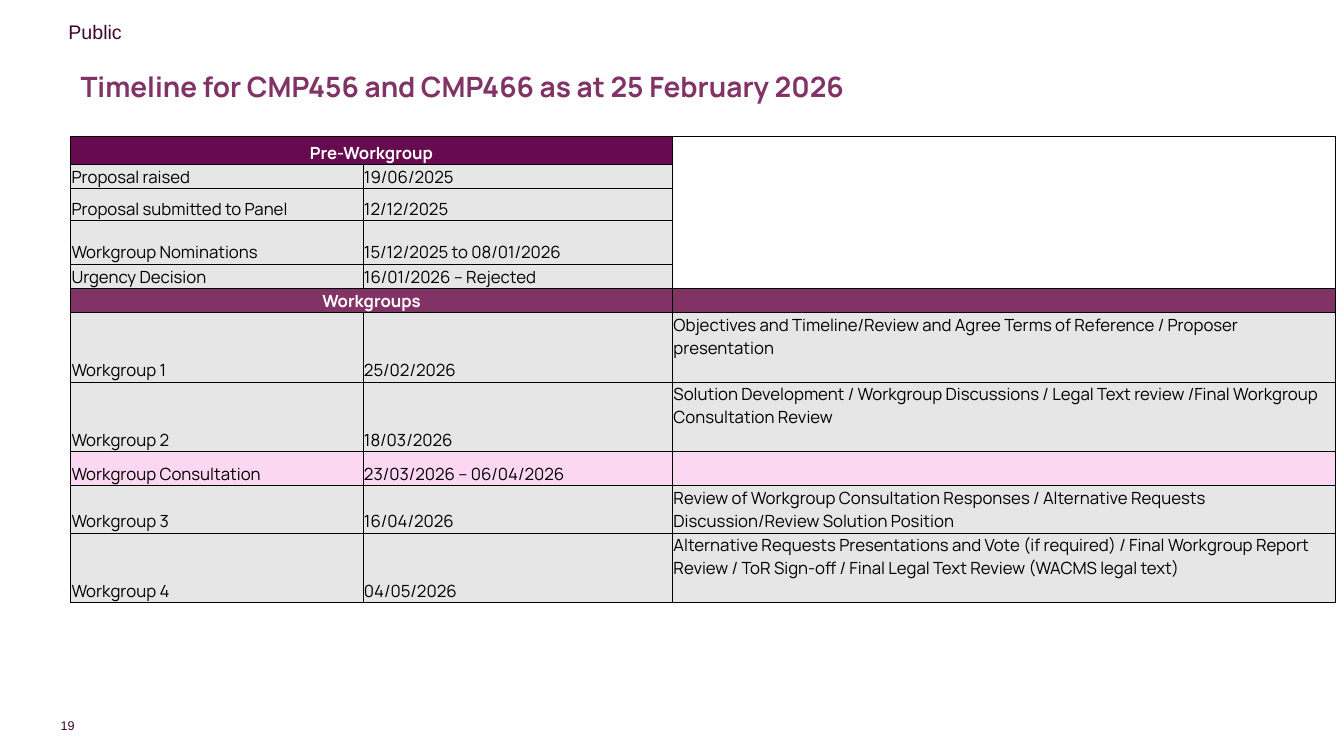
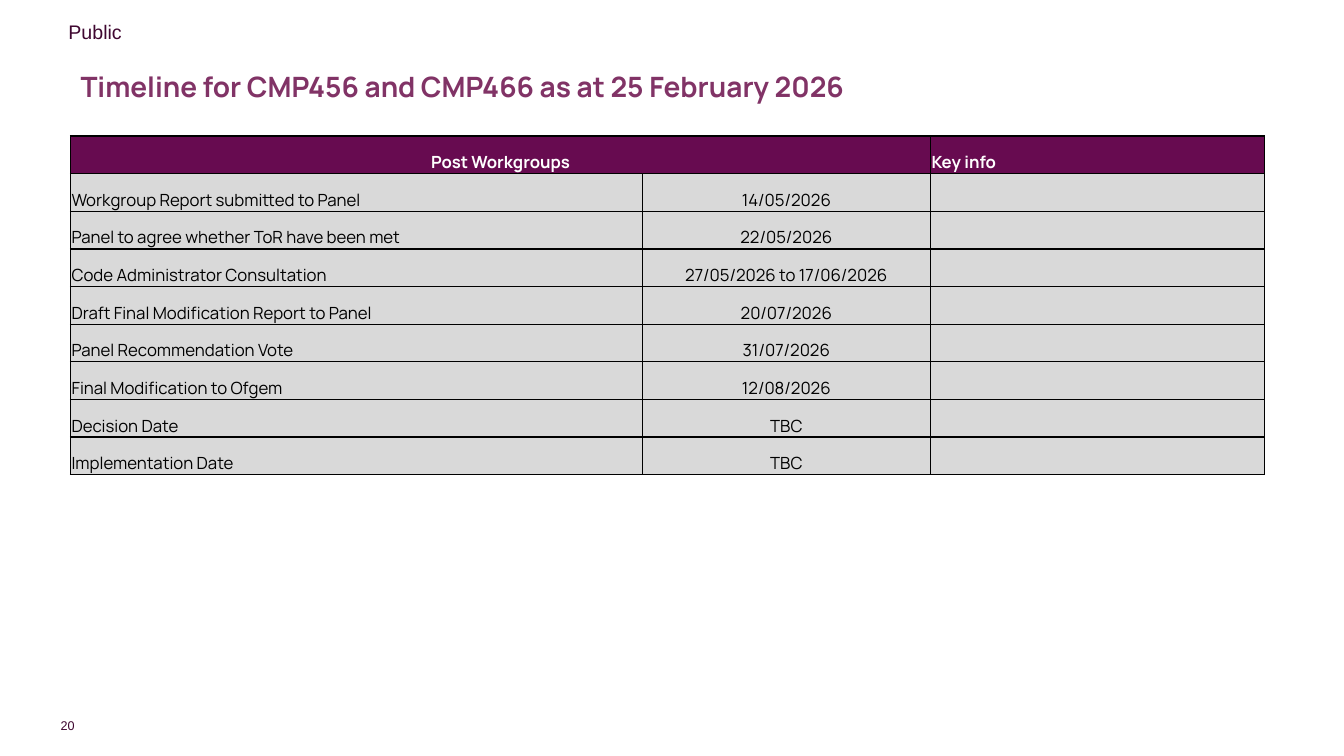
from lxml.etree import SubElement
from pptx import Presentation
from pptx.dml.color import RGBColor
from pptx.enum.text import MSO_ANCHOR as Anchor, PP_ALIGN as Align
from pptx.oxml.ns import qn
from pptx.util import Pt

# Scale: 100 px to the inch
PX = 9144

# Colours
WHITE = RGBColor(0xFF, 0xFF, 0xFF)
BLACK = RGBColor(0x00, 0x00, 0x00)
PLUM = RGBColor(0x67, 0x0B, 0x50)
MAUVE = RGBColor(0x81, 0x33, 0x66)
INK = RGBColor(0x3F, 0x07, 0x30)
PALE = RGBColor(0xE7, 0xE6, 0xE6)
GREY = RGBColor(0xD9, 0xD9, 0xD9)
PINK = RGBColor(0xFB, 0xD7, 0xF2)
HEADS = (PLUM, MAUVE)

SANS = "Arial"
BRAND = "Manrope"
TITLE = "Timeline for CMP456 and CMP466 as at 25 February 2026"

# Each row: height, fill, then the text of each column
WORK = [
    (28, PLUM, "Pre-Workgroup", "", ""),
    (24, PALE, "Proposal raised", "19/06/2025", ""),
    (32, PALE, "Proposal submitted to Panel", "12/12/2025", ""),
    (43, PALE, "Workgroup Nominations", "15/12/2025 to 08/01/2026", ""),
    (24, PALE, "Urgency Decision", "16/01/2026 – Rejected", ""),
    (24, MAUVE, "Workgroups", "", ""),
    (69, PALE, "Workgroup 1", "25/02/2026",
     "Objectives and Timeline/Review and Agree Terms of Reference / "
     "Proposer presentation"),
    (69, PALE, "Workgroup 2", "18/03/2026",
     "Solution Development / Workgroup Discussions / Legal Text review "
     "/Final Workgroup Consultation Review"),
    (34, PINK, "Workgroup Consultation", "23/03/2026 – 06/04/2026", ""),
    (47, PALE, "Workgroup 3", "16/04/2026",
     "Review of Workgroup Consultation Responses / Alternative Requests "
     "Discussion/Review Solution Position"),
    (69, PALE, "Workgroup 4", "04/05/2026",
     "Alternative Requests Presentations and Vote (if required) / Final "
     "Workgroup Report Review / ToR Sign-off / Final Legal Text Review "
     "(WACMS legal text)"),
]

STEPS = [
    ("Workgroup Report submitted to Panel", "14/05/2026"),
    ("Panel to agree whether ToR have been met", "22/05/2026"),
    ("Code Administrator Consultation", "27/05/2026 to 17/06/2026"),
    ("Draft Final Modification Report to Panel", "20/07/2026"),
    ("Panel Recommendation Vote", "31/07/2026"),
    ("Final Modification to Ofgem", "12/08/2026"),
    ("Decision Date", "TBC"),
    ("Implementation Date", "TBC"),
]
STEP = 336 / (len(STEPS) + 1)
POST = [(STEP, PLUM, "Post Workgroups", "", "Key info")]
POST += [(STEP, GREY, *step, "") for step in STEPS]


def px(num):
    return round(num * PX)


def add_run(para, text, size, color, face, bold=False):
    run = para.add_run()
    run.text = text
    font = run.font
    font.size, font.name, font.bold = Pt(size), face, bold
    font.color.rgb = color


def add_text(slide, box, text, size, color, face, bold=False,
             anchor=Anchor.TOP, align=Align.LEFT, wrap=True, pad=None):
    frame = slide.shapes.add_textbox(*map(px, box)).text_frame
    frame.word_wrap = wrap
    frame.vertical_anchor = anchor
    if pad is not None:
        frame.margin_left = frame.margin_right = px(pad)
        frame.margin_top = frame.margin_bottom = px(pad)
    para = frame.paragraphs[0]
    para.alignment = align
    add_run(para, text, size, color, face, bold)
    return para


def add_edges(cell, width):
    props = cell._tc.get_or_add_tcPr()
    for side in ("L", "R", "T", "B"):
        line = SubElement(props, qn(f"a:ln{side}"), w=str(Pt(width)))
        fill = SubElement(line, qn("a:solidFill"))
        SubElement(fill, qn("a:srgbClr"), val=str(BLACK))


def fill_cell(cell, text, fill, align, anchor, line):
    add_edges(cell, line)
    cell.fill.solid()
    cell.fill.fore_color.rgb = fill
    cell.margin_left = cell.margin_right = cell.margin_top = px(1)
    cell.margin_bottom = 0
    cell.vertical_anchor = anchor
    para = cell.text_frame.paragraphs[0]
    para.alignment = align
    head = fill in HEADS
    if text:
        add_run(para, text, 12, WHITE if head else BLACK, BRAND, head)
    else:
        # Keeps empty cells from stretching their row
        SubElement(para._p, qn("a:endParaRPr"), sz="1200")


def add_grid(slide, cols, rows, line, mid):
    high = sum(row[0] for row in rows)
    frame = slide.shapes.add_table(len(rows), len(cols), px(70), px(135),
                                   px(sum(cols)), px(high))
    table = frame.table
    table.first_row = table.horz_banding = False
    for col, wide in zip(table.columns, cols):
        col.width = px(wide)
    for r, (tall, fill, *texts) in enumerate(rows):
        table.rows[r].height = px(tall)
        head = fill in HEADS
        aligns = (Align.CENTER if head else Align.LEFT, mid, Align.LEFT)
        for c, text in enumerate(texts):
            top = c == 2 and not head
            fill_cell(table.cell(r, c), text, fill, aligns[c],
                      Anchor.TOP if top else Anchor.BOTTOM, line)
        if head:
            table.cell(r, 0).merge(table.cell(r, 1))
    return table


def add_page(deck, num):
    slide = deck.slides.add_slide(deck.slide_layouts[6])
    # Footer number, marking and title
    add_text(slide, (59, 712, 15, 15), str(num), 9, INK, SANS,
             anchor=Anchor.MIDDLE, align=Align.RIGHT, wrap=False, pad=0)
    add_text(slide, (58, 15, 500, 34), "Public", 14, INK, SANS)
    title = add_text(slide, (70, 40, 1062, 95), TITLE, 20, MAUVE, BRAND,
                     bold=True, anchor=Anchor.MIDDLE)
    title.line_spacing = 0.9
    return slide


def main():
    deck = Presentation()
    deck.slide_width, deck.slide_height = px(1333), px(750)

    # Workgroup stages, with a blank block at top right
    grid = add_grid(add_page(deck, 19), (290, 307, 657), WORK, 0.5, Align.LEFT)
    blank = grid.cell(0, 2)
    blank.merge(grid.cell(4, 2))
    blank.fill.fore_color.rgb = WHITE

    # Stages after the workgroups
    add_grid(add_page(deck, 20), (567, 286, 331), POST, 1, Align.CENTER)

    deck.save("out.pptx")


if __name__ == "__main__":
    main()
